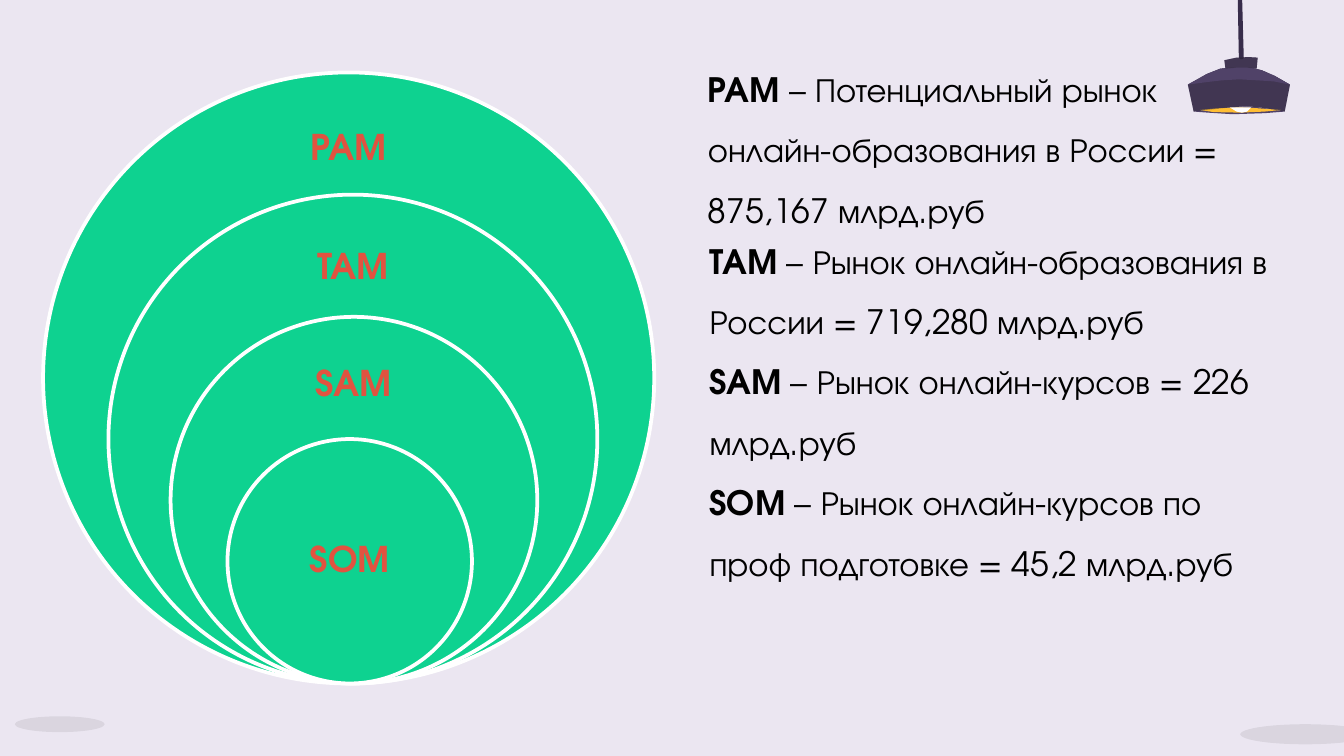
from typing import NamedTuple

from lxml import etree
from pptx import Presentation
from pptx.dml.color import RGBColor
from pptx.enum.shapes import MSO_SHAPE
from pptx.enum.text import MSO_ANCHOR, MSO_AUTO_SIZE, PP_ALIGN
from pptx.oxml.ns import qn
from pptx.util import Cm, Pt

OVAL = MSO_SHAPE.OVAL
MIDDLE = MSO_ANCHOR.MIDDLE
GROW = MSO_AUTO_SIZE.SHAPE_TO_FIT_TEXT
CENTER = PP_ALIGN.CENTER

HUES = {
    "back": "EBE6F1", "green": "0ED290", "white": "FFFFFF", "red": "E15340",
    "black": "000000", "lamp": "504268", "cord": "382D4B", "glow": "FFBE34",
    "shade": "191919",
}
FONT = "TeX Gyre Adventor"
LABEL = {"size": Pt(19), "bold": True, "name": FONT}
BODY = {"size": Pt(18), "name": FONT}
LABEL_BOX = {"margin_left": Cm(0.38), "margin_right": Cm(0.38),
             "margin_top": Cm(0.38), "margin_bottom": Cm(0.38),
             "vertical_anchor": MIDDLE, "word_wrap": True}
BODY_BOX = {"word_wrap": True, "auto_size": GROW}

STEP = 2.31    # each ring is this much narrower than the one around it
BASE = 12.92   # all rings touch at this height

Points = list[tuple[float, float]]


class Ring(NamedTuple):
    name: str
    mid: float
    text_y: float
    text_h: float


class Part(NamedTuple):
    points: Points
    hue: str
    alpha: int = 100
    line: float = 0


class Note(NamedTuple):
    left: float
    top: float
    width: float
    height: float
    items: list[tuple[str, str]]


RINGS = [
    Ring("PAM", 6.59, 2.82, 1.73),
    Ring("TAM", 6.67, 5.07, 1.65),
    Ring("SAM", 6.69, 7.28, 1.55),
    Ring("SOM", 6.61, 10.6, 2.31),
]
NOTES = [
    Note(13.16, 4.04, 11.13, 9.12, [
        ("TAM", " – Рынок онлайн-образования в России = 719,280 млрд.руб"),
        ("SAM", " – Рынок онлайн-курсов = 226 млрд.руб"),
        ("SOM", " – Рынок онлайн-курсов по проф подготовке = 45,2 млрд.руб"),
    ]),
    Note(13.13, 0.79, 11.15, 4.5, [
        ("PAM", " – Потенциальный рынок онлайн-образования в России"
                " = 875,167 млрд.руб"),
    ]),
]
SPOTS = [(23.44, 13.69, 2.46, 0.38), (0.28, 13.54, 1.7, 0.3)]

# Lamp edges: the dome runs right to left, the others left to right
DOME = [(24.38, 1.6), (24.1, 1.44), (23.85, 1.33), (23.6, 1.27), (23.34, 1.27),
        (23.06, 1.3), (22.81, 1.4), (22.63, 1.5), (22.45, 1.6)]
BROW = [(22.83, 1.55), (23.09, 1.52), (23.42, 1.5), (23.77, 1.52), (24.08, 1.54)]
HEM = [(22.56, 2.11), (22.91, 2.07), (23.27, 2.03), (23.55, 2.01),
       (23.8, 2.03), (24, 2.06), (24.28, 2.11)]
LIP = [(23.9, 2.14), (23.3, 2.16), (22.83, 2.13)]
GLOW = [(22.68, 2.08), (23, 2.05), (23.42, 2.03), (23.67, 2.04),
        (24.21, 2.08), (23.9, 2.11), (23.44, 2.13), (22.94, 2.12)]
CAP = [(23.14, 1.14), (23.37, 1.09), (23.6, 1.08), (23.77, 1.09),
       (23.75, 1.3), (23.57, 1.28), (23.37, 1.28), (23.16, 1.3)]
CORD = [(23.42, 0), (23.44, 1.09), (23.48, 1.09), (23.45, 0)]
BULB = [(23.24, 2.03), (23.37, 2.11), (23.47, 2.13), (23.57, 2.11), (23.65, 2.03)]
LAMP = [
    Part(DOME + HEM, "lamp"),
    Part(HEM + LIP, "lamp"),
    Part(GLOW, "glow"),
    Part(CAP, "lamp"),
    Part(CORD, "cord", line=1.5),
    Part(BULB, "white"),
    Part(DOME + HEM, "shade", 27),
    Part(DOME + BROW, "lamp"),
    Part(CAP, "shade", 27),
]


def rgb(hue: str) -> RGBColor:
    return RGBColor.from_string(HUES[hue])


def apply(target, values: dict) -> None:
    for key, value in values.items():
        setattr(target, key, value)


def paint(shape, hue: str, alpha: int = 100, edge: str = "", line: float = 0) -> None:
    """Fill a shape, with opacity in percent, and outline it if line is set."""
    shape.shadow.inherit = False
    shape.fill.solid()
    shape.fill.fore_color.rgb = rgb(hue)
    if alpha < 100:
        tone = shape.fill._xPr.find(qn("a:solidFill"))[0]
        etree.SubElement(tone, qn("a:alpha"), val=str(alpha * 1000))
    if line:
        shape.line.color.rgb = rgb(edge)
        shape.line.width = Pt(line)
    else:
        shape.line.fill.background()


def add_oval(slide, left: float, top: float, width: float, height: float):
    return slide.shapes.add_shape(OVAL, Cm(left), Cm(top), Cm(width), Cm(height))


def add_run(para, text: str, hue: str, style: dict) -> None:
    run = para.add_run()
    run.text = text
    apply(run.font, style)
    run.font.color.rgb = rgb(hue)


def draw_part(slide, part: Part) -> None:
    spots = [(Cm(x), Cm(y)) for x, y in part.points]
    pen = slide.shapes.build_freeform(*spots[0])
    pen.add_line_segments(spots[1:], close=True)
    paint(pen.convert_to_shape(), part.hue, part.alpha, part.hue, part.line)


def draw_ring(slide, ring: Ring, size: float) -> None:
    oval = add_oval(slide, ring.mid - size / 2, BASE - size, size, size)
    paint(oval, "green", edge="white", line=2)
    width = 3.23
    box = slide.shapes.add_textbox(
        Cm(ring.mid - width / 2), Cm(ring.text_y - ring.text_h / 2),
        Cm(width), Cm(ring.text_h))
    apply(box.text_frame, LABEL_BOX)
    para = box.text_frame.paragraphs[0]
    apply(para, {"alignment": CENTER, "line_spacing": 0.9})
    add_run(para, ring.name, "red", LABEL)


def draw_note(slide, note: Note) -> None:
    frame = slide.shapes.add_textbox(
        Cm(note.left), Cm(note.top), Cm(note.width), Cm(note.height)).text_frame
    apply(frame, BODY_BOX)
    for i, (term, text) in enumerate(note.items):
        para = frame.add_paragraph() if i else frame.paragraphs[0]
        para.line_spacing = 1.5
        add_run(para, term, "black", BODY | {"bold": True})
        add_run(para, text, "black", BODY | {"bold": False})


def main() -> None:
    deck = Presentation()
    apply(deck, {"slide_width": Cm(25.4), "slide_height": Cm(14.29)})
    slide = deck.slides.add_slide(deck.slide_layouts[6])
    slide.background.fill.solid()
    slide.background.fill.fore_color.rgb = rgb("back")
    for part in LAMP:
        draw_part(slide, part)
    for spot in SPOTS:
        paint(add_oval(slide, *spot), "black", 7)
    for i, ring in enumerate(RINGS):
        draw_ring(slide, ring, STEP * (5 - i))
    for note in NOTES:
        draw_note(slide, note)
    deck.save("out.pptx")


if __name__ == "__main__":
    main()
